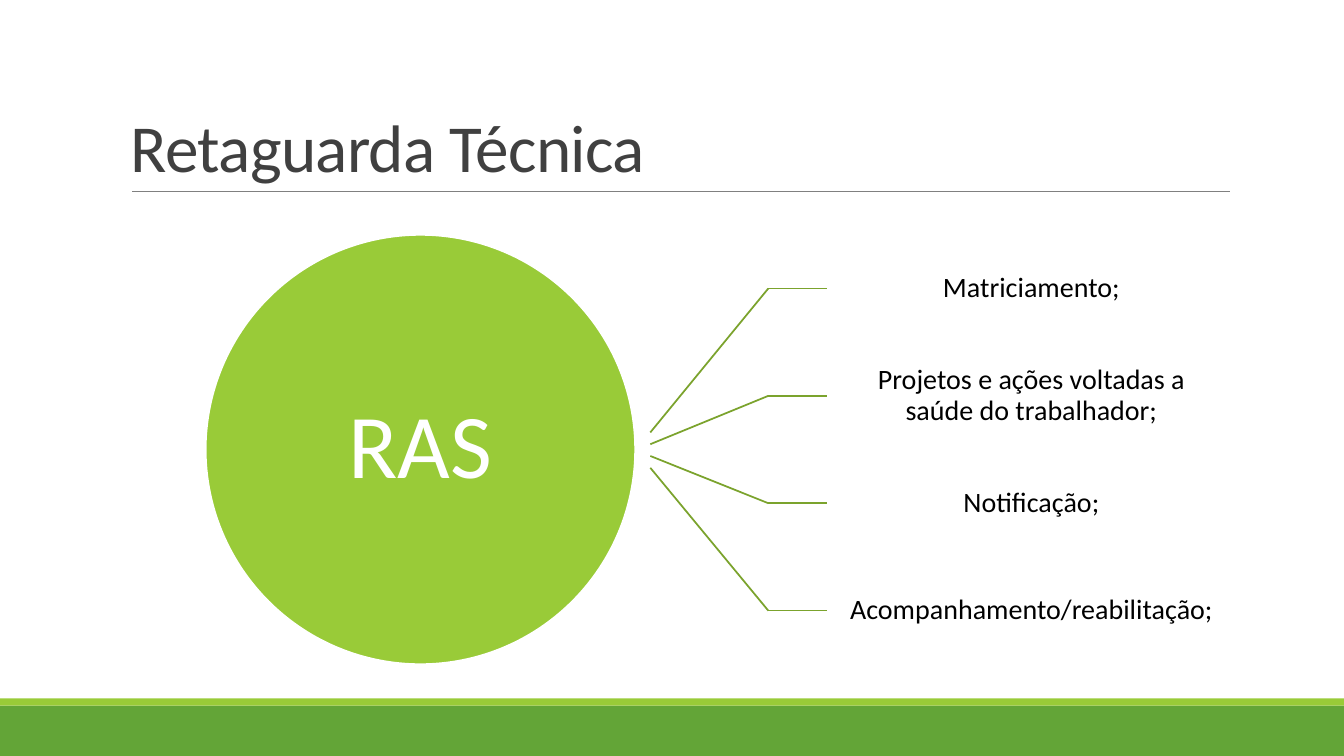
from pptx import Presentation
from pptx.dml.color import RGBColor
from pptx.enum.shapes import MSO_CONNECTOR as Connector, MSO_SHAPE as Shape
from pptx.enum.text import MSO_ANCHOR as Anchor, PP_ALIGN as Align
from pptx.oxml.ns import qn
from pptx.util import Inches, Pt
from lxml import etree

SERVICES = [
    "Matriciamento;",
    "Projetos e ações voltadas a saúde do trabalhador;",
    "Notificação;",
    "Acompanhamento/reabilitação;",
]
GREEN, LIME, BRANCH = "63A537", "99CB38", "7BA32D"
DIAGRAM_TOP, ROW_HEIGHT = 2.33, 1.065
BRANCH_START, BRANCH_BEND, LABEL_LEFT = 6.45, 7.62, 8.2
FAN_TOP, FAN_STEP = 4.29, 0.117


def color(hex_code):
    """Turn a hex string into a colour."""
    return RGBColor.from_string(hex_code)


def add_filled(slide, kind, left, top, width, height, fill, outline=None):
    """Add a filled preset shape with an optional outline."""
    shape = slide.shapes.add_shape(
        kind, Inches(left), Inches(top), Inches(width), Inches(height))
    shape.shadow.inherit = False
    shape.fill.solid()
    shape.fill.fore_color.rgb = color(fill)
    if outline:
        shape.line.color.rgb = color(outline)
        shape.line.width = Pt(1.25)
    else:
        shape.line.fill.background()
    return shape


def add_line(slide, start, end, stroke, width):
    """Add a straight line without a shadow."""
    line = slide.shapes.add_connector(
        Connector.STRAIGHT, *(Inches(value) for value in (*start, *end)))
    line.line.color.rgb = color(stroke)
    line.line.width = Pt(width)
    etree.SubElement(line._element.spPr, qn("a:effectLst"))
    return line


def write(shape, text, size, hex_code, anchor=Anchor.MIDDLE,
          align=Align.CENTER, spacing=0.9, inset=None):
    """Write one paragraph into a shape and return its run."""
    frame = shape.text_frame
    frame.word_wrap = True
    frame.vertical_anchor = anchor
    if inset is not None:
        frame.margin_left = frame.margin_right = Inches(inset)
        frame.margin_top = frame.margin_bottom = Inches(inset)
    paragraph = frame.paragraphs[0]
    paragraph.alignment = align
    paragraph.line_spacing = spacing
    run = paragraph.add_run()
    run.text = text
    run.font.name = "Calibri"
    run.font.size = Pt(size)
    run.font.color.rgb = color(hex_code)
    return run


def add_box(slide, left, top, width, height):
    """Add an empty text box."""
    return slide.shapes.add_textbox(
        Inches(left), Inches(top), Inches(width), Inches(height))


def add_title(slide, text):
    """Add the slide title with tightened letter spacing."""
    title = add_box(slide, 1.2, 0.31, 11, 1.59)
    run = write(title, text, 48, "404040", Anchor.BOTTOM, Align.LEFT, 0.85)
    run._r.get_or_add_rPr().set("spc", "-50")


def add_service(slide, row, text):
    """Add a bent branch and the service label at its end."""
    top = DIAGRAM_TOP + row * ROW_HEIGHT
    middle = top + ROW_HEIGHT / 2
    bend = (BRANCH_BEND, middle)
    add_line(slide, (BRANCH_START, FAN_TOP + row * FAN_STEP), bend, BRANCH, 1.25)
    stem = add_line(slide, bend, (LABEL_LEFT, middle), BRANCH, 1.25)
    label = add_box(slide, LABEL_LEFT, top, 4.06, ROW_HEIGHT)
    write(label, text, 20, "000000", inset=0.16)
    stem.end_connect(label, 1)


def main():
    """Build and save the slide."""
    deck = Presentation()
    deck.slide_width, deck.slide_height = Inches(13.33), Inches(7.5)
    slide = deck.slides.add_slide(deck.slide_layouts[6])
    add_filled(slide, Shape.RECTANGLE, 0, 7, 13.33, 0.5, GREEN)
    add_filled(slide, Shape.RECTANGLE, 0, 6.93, 13.33, 0.07, LIME)
    add_line(slide, (1.31, 1.9), (12.2, 1.9), "808080", 0.5)
    add_title(slide, "Retaguarda Técnica")
    network = add_filled(
        slide, Shape.OVAL, 2.04, DIAGRAM_TOP, 4.26, 4.26, LIME, "FFFFFF")
    write(network, "RAS", 65, "FFFFFF", inset=0)
    for row, service in enumerate(SERVICES):
        add_service(slide, row, service)
    deck.save("out.pptx")


if __name__ == "__main__":
    main()
